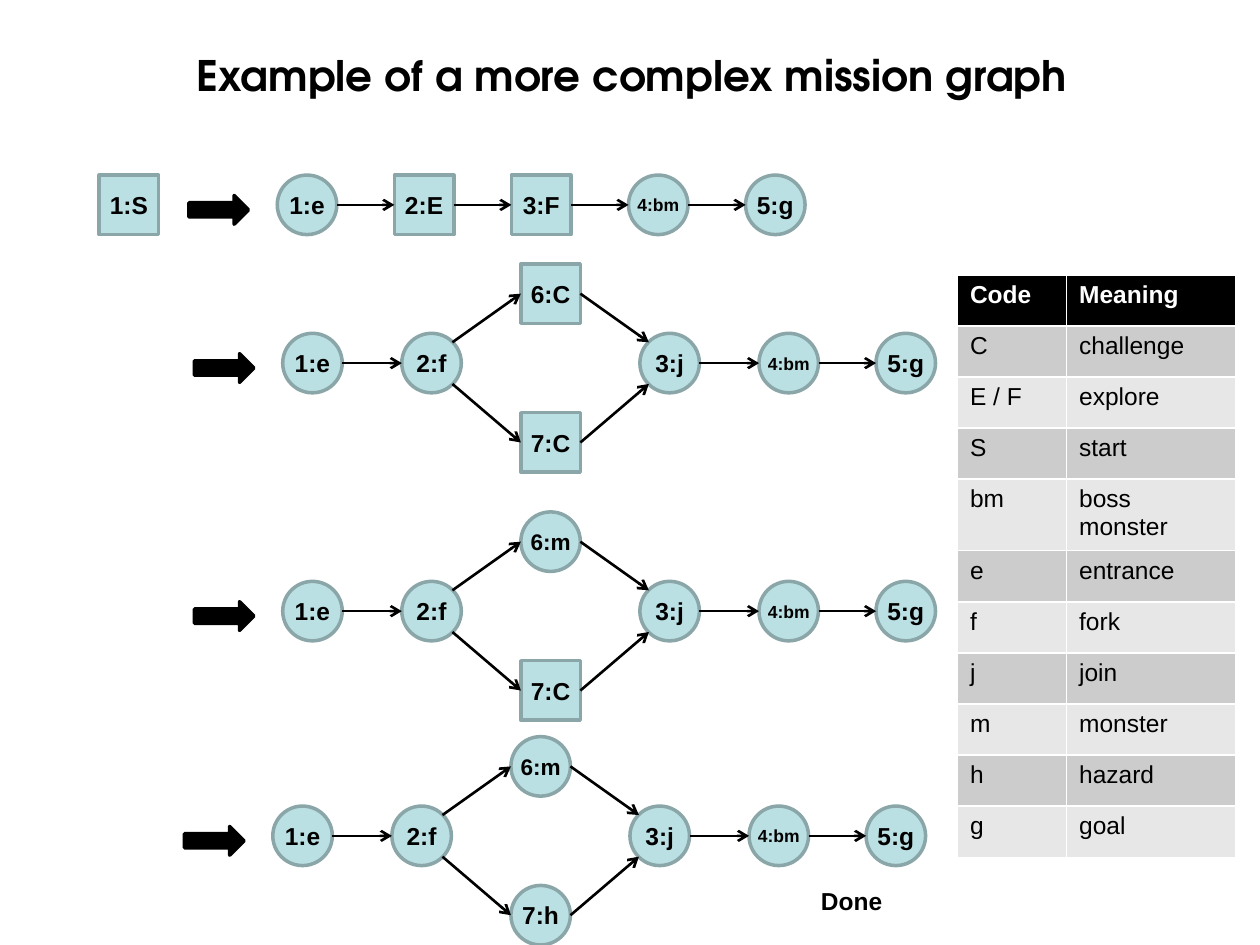
"""Build a slide that expands a mission graph step by step, with a code table."""
from dataclasses import dataclass

from lxml import etree
from pptx import Presentation
from pptx.dml.color import RGBColor
from pptx.enum.shapes import MSO_CONNECTOR, MSO_SHAPE
from pptx.enum.text import MSO_ANCHOR, PP_ALIGN
from pptx.oxml.ns import qn
from pptx.util import Cm, Pt

RECT, OVAL, BLOCK_ARROW = MSO_SHAPE.RECTANGLE, MSO_SHAPE.OVAL, MSO_SHAPE.RIGHT_ARROW
STRAIGHT = MSO_CONNECTOR.STRAIGHT
MIDDLE, TOP = MSO_ANCHOR.MIDDLE, MSO_ANCHOR.TOP
CENTER, LEFT = PP_ALIGN.CENTER, PP_ALIGN.LEFT


@dataclass(frozen=True)
class Theme:
    black: RGBColor = RGBColor(0x00, 0x00, 0x00)
    white: RGBColor = RGBColor(0xFF, 0xFF, 0xFF)
    node_fill: RGBColor = RGBColor(0xBB, 0xE0, 0xE3)
    node_line: RGBColor = RGBColor(0x8A, 0xA6, 0xA8)
    dark_band: RGBColor = RGBColor(0xCC, 0xCC, 0xCC)
    light_band: RGBColor = RGBColor(0xE7, 0xE7, 0xE7)
    title_font: str = "TeX Gyre Adventor"
    body_font: str = "Arial"
    title: Pt = Pt(24)
    body: Pt = Pt(14)
    medium: Pt = Pt(12.9)
    small: Pt = Pt(10)


theme = Theme()
NODE = 1.2
LABEL_SIZES = {"bm": theme.small, "m": theme.medium}
E, W = (1, 0.5), (0, 0.5)
NE, SE, NW, SW = (0.85, 0.15), (0.85, 0.85), (0.15, 0.15), (0.15, 0.85)
RECT_SITES = {W: 1, E: 3}

prs = Presentation()
prs.slide_width, prs.slide_height = Cm(25.4), Cm(19.05)
s = prs.slides.add_slide(prs.slide_layouts[6])


def add_node(label, x, y):
    """Draw a square for a nonterminal (upper-case) code, else a circle."""
    code = label.split(":")[1]
    sp = s.shapes.add_shape(RECT if code.isupper() else OVAL, Cm(x), Cm(y), Cm(NODE), Cm(NODE))
    sp.shadow.inherit = False
    sp.fill.solid()
    sp.fill.fore_color.rgb = theme.node_fill
    sp.line.color.rgb = theme.node_line
    sp.line.width = Pt(2)
    tf = sp.text_frame
    tf.margin_left = tf.margin_right = tf.margin_top = tf.margin_bottom = 0
    tf.vertical_anchor = MIDDLE
    tf.word_wrap = False
    p = tf.paragraphs[0]
    p.text, p.alignment = label, CENTER
    p.font.name, p.font.size = theme.body_font, LABEL_SIZES.get(code, theme.body)
    p.font.bold, p.font.color.rgb = True, theme.black
    return sp


def link(start, end, start_site=E, end_site=W):
    """Draw an arrow from a site of one node to a site of another."""
    points = [round(v) for sp, (fx, fy) in ((start, start_site), (end, end_site))
              for v in (sp.left + fx * sp.width, sp.top + fy * sp.height)]
    cxn = s.shapes.add_connector(STRAIGHT, *points)
    cxn.line.color.rgb = theme.black
    cxn.line.width = Pt(1.5)
    etree.SubElement(cxn.line._get_or_add_ln(), qn("a:tailEnd"), type="arrow")
    etree.SubElement(cxn._element.spPr, qn("a:effectLst"))
    if start.auto_shape_type == RECT:
        cxn.begin_connect(start, RECT_SITES[start_site])
    if end.auto_shape_type == RECT:
        cxn.end_connect(end, RECT_SITES[end_site])


texts = [
    ("Example of a more complex mission graph", 1.3, 0.74, 22.86, 1.55,
     theme.title_font, theme.title, CENTER, MIDDLE, True),
    ("Done", 16.3, 17.73, 1.75, 0.86, theme.body_font, theme.body, LEFT, TOP, False),
]
for text, x, y, w, h, font, size, align, anchor, wrap in texts:
    tf = s.shapes.add_textbox(Cm(x), Cm(y), Cm(w), Cm(h)).text_frame
    tf.word_wrap, tf.vertical_anchor = wrap, anchor
    p = tf.paragraphs[0]
    p.text, p.alignment = text, align
    p.font.name, p.font.size = font, size
    p.font.bold, p.font.color.rgb = True, theme.black

row_origins = [(5.59, 3.53), (5.7, 6.72), (5.7, 11.72), (5.5, 16.25)]
for x, y in row_origins:
    sp = s.shapes.add_shape(BLOCK_ARROW, Cm(x - 1.78), Cm(y + 0.41), Cm(1.2), Cm(0.58))
    sp.shadow.inherit = False
    sp.fill.solid()
    sp.fill.fore_color.rgb = theme.black
    sp.line.color.rgb = theme.black
    sp.line.width = Pt(2)

add_node("1:S", 2, 3.53)
x, y = row_origins[0]
chain = [add_node(label, x + 2.36 * i, y)
         for i, label in enumerate(["1:e", "2:E", "3:F", "4:bm", "5:g"])]
for start, end in zip(chain, chain[1:]):
    link(start, end)

branch_labels = [("6:C", "7:C"), ("6:m", "7:C"), ("6:m", "7:h")]
for (x, y), (upper_label, lower_label) in zip(row_origins[1:], branch_labels):
    entrance = add_node("1:e", x, y)
    fork = add_node("2:f", x + 2.4, y)
    upper = add_node(upper_label, x + 4.8, y - 1.4)
    lower = add_node(lower_label, x + 4.8, y + 1.6)
    join = add_node("3:j", x + 7.2, y)
    boss = add_node("4:bm", x + 9.6, y)
    goal = add_node("5:g", x + 11.96, y)
    for start, end in ((entrance, fork), (join, boss), (boss, goal)):
        link(start, end)
    link(fork, upper, NE, W)
    link(fork, lower, SE, W)
    link(upper, join, E, NW)
    link(lower, join, E, SW)

codes = [
    ("Code", "Meaning"), ("C", "challenge"), ("E / F", "explore"), ("S", "start"),
    ("bm", "boss monster"), ("e", "entrance"), ("f", "fork"), ("j", "join"),
    ("m", "monster"), ("h", "hazard"), ("g", "goal"),
]
table = s.shapes.add_table(len(codes), 2, Cm(19.3), Cm(5.54), Cm(5.61), Cm(1.03 * len(codes))).table
table.columns[0].width, table.columns[1].width = Cm(2.2), Cm(3.41)
for i, row in enumerate(codes):
    header = i == 0
    band = theme.dark_band if i % 2 else theme.light_band
    for j, text in enumerate(row):
        cell = table.cell(i, j)
        cell.fill.solid()
        cell.fill.fore_color.rgb = theme.black if header else band
        p = cell.text_frame.paragraphs[0]
        p.text = text
        p.font.name, p.font.size, p.font.bold = theme.body_font, theme.body, header
        p.font.color.rgb = theme.white if header else theme.black

prs.save("out.pptx")
